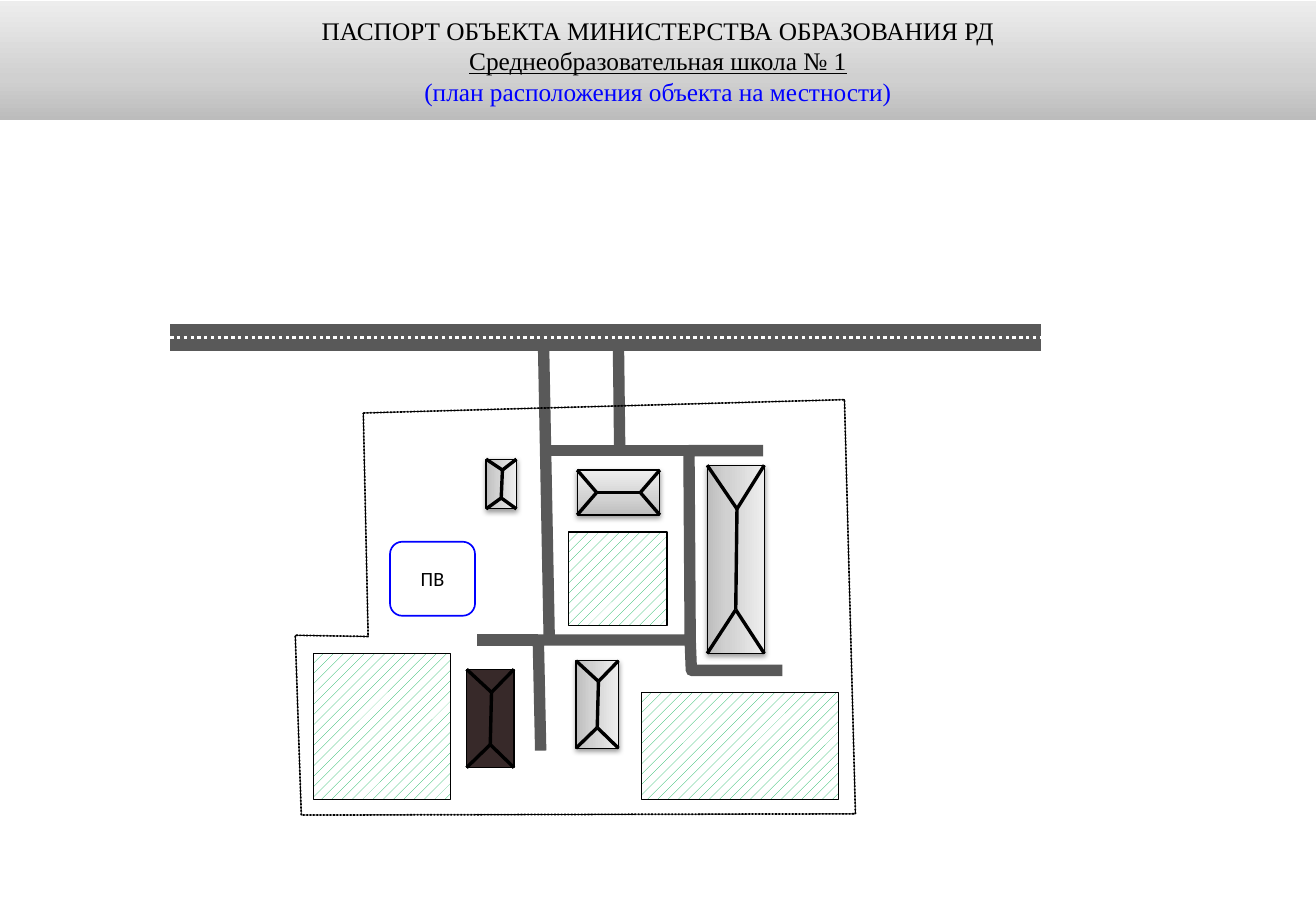
from dataclasses import dataclass

from lxml import etree
from pptx import Presentation
from pptx.dml.color import RGBColor
from pptx.enum.dml import MSO_LINE, MSO_PATTERN
from pptx.enum.shapes import MSO_CONNECTOR, MSO_SHAPE
from pptx.enum.text import MSO_ANCHOR, MSO_AUTO_SIZE, PP_ALIGN
from pptx.oxml import parse_xml
from pptx.oxml.ns import qn
from pptx.util import Inches, Pt

RECTANGLE, ROUNDED = MSO_SHAPE.RECTANGLE, MSO_SHAPE.ROUNDED_RECTANGLE
STRAIGHT = MSO_CONNECTOR.STRAIGHT
HATCH = MSO_PATTERN.DASHED_UPWARD_DIAGONAL
DOTTED = MSO_LINE.ROUND_DOT
MIDDLE, CENTER, NO_FIT = MSO_ANCHOR.MIDDLE, PP_ALIGN.CENTER, MSO_AUTO_SIZE.NONE
DRAWING_NS = "http://schemas.openxmlformats.org/drawingml/2006/main"


@dataclass(frozen=True)
class Theme:
    black: str = "000000"
    white: str = "FFFFFF"
    blue: str = "0000FF"
    green: str = "00B050"
    road: str = "595959"
    dark_roof: str = "372929"
    banner: tuple = ((0, "BCBCBC"), (35, "D0D0D0"), (100, "EDEDED"))
    roof: tuple = ((0, "BDBDBD"), (35, "D1D1D1"), (100, "EEEEEE"))
    title_font: str = "Times New Roman"
    label_font: str = "Calibri"
    title_size: float = 15
    label_size: float = 12
    hairline: float = 0
    road_width: float = 6.75
    highway_width: float = 16


THEME = Theme()

TITLE_LINES = (
    ("ПАСПОРТ ОБЪЕКТА МИНИСТЕРСТВА ОБРАЗОВАНИЯ РД", THEME.black, False),
    ("Среднеобразовательная школа № 1", THEME.black, True),
    ("(план расположения объекта на местности)", THEME.blue, False),
)
BOUNDARY = ((2.99, 3.4), (6.95, 3.29), (7.04, 6.7), (2.48, 6.71),
            (2.43, 5.23), (3.03, 5.24))
ROADS = (
    ((6.28, 3.71), (5.67, 3.71), (5.68, 5.27), (4.43, 5.27), (4.45, 6.18)),
    ((4.43, 5.27), (3.93, 5.27)),
    ((4.47, 2.69), (4.52, 5.27)),
    ((5.68, 5.26), (5.69, 5.52), (6.44, 5.52)),
)
LINKS = (((5.09, 2.88), (5.1, 3.71)), ((4.5, 3.71), (5.67, 3.71)))
# left, top, width, height, depth of the hip, dark roof
BUILDINGS = (
    (5.82, 3.83, 0.47, 1.55, 0.36, False),
    (3.84, 5.51, 0.39, 0.81, 0.19, True),
    (4.74, 5.44, 0.35, 0.72, 0.17, False),
    (4.75, 3.87, 0.68, 0.37, 0.16, False),
    (4, 3.78, 0.25, 0.41, 0.09, False),
)
LAWNS = ((2.58, 5.38, 1.13, 1.2), (5.28, 5.7, 1.62, 0.88), (4.68, 4.38, 0.81, 0.77))


def rgb(value):
    return RGBColor.from_string(value)


def set_line(line, color, width, dash=None):
    line.color.rgb = rgb(color)
    line.width = Pt(width)
    if dash:
        line.dash_style = dash


def set_gradient(shape, stops):
    """Gradient that runs from the bottom edge to the top edge."""
    shape.fill.gradient()
    shape.fill.gradient_angle = 90
    stop_list = shape.element.spPr.find(qn("a:gradFill")).find(qn("a:gsLst"))
    for stop in list(stop_list):
        stop_list.remove(stop)
    for position, color in stops:
        stop = etree.SubElement(stop_list, qn("a:gs"), pos=str(position * 1000))
        etree.SubElement(stop, qn("a:srgbClr"), val=color)


def add_drop_shadow(shape):
    effects = shape.element.spPr.find(qn("a:effectLst"))
    effects.append(parse_xml(
        f'<a:outerShdw xmlns:a="{DRAWING_NS}" blurRad="{Pt(3.1)}" dist="{Pt(1.6)}" '
        f'dir="5400000" rotWithShape="0"><a:srgbClr val="{THEME.black}">'
        '<a:alpha val="38000"/></a:srgbClr></a:outerShdw>'))


def add_run(paragraph, text, font, size, color, underline=False):
    paragraph.alignment = CENTER
    run = paragraph.add_run()
    run.text = text
    run.font.name, run.font.size = font, Pt(size)
    run.font.color.rgb = rgb(color)
    run.font.underline = underline


def add_box(slide, kind, left, top, width, height):
    box = slide.shapes.add_shape(
        kind, Inches(left), Inches(top), Inches(width), Inches(height))
    box.shadow.inherit = False
    return box


def add_segment(slide, start, end, color, width, dash=None):
    segment = slide.shapes.add_connector(
        STRAIGHT, *(Inches(value) for value in (*start, *end)))
    set_line(segment.line, color, width, dash)
    etree.SubElement(segment.element.spPr, qn("a:effectLst"))


def add_outline(slide, points, color, width, dash=None, close=False):
    corners = [(Inches(x), Inches(y)) for x, y in points]
    builder = slide.shapes.build_freeform(*corners[0])
    builder.add_line_segments(corners[1:], close=close)
    outline = builder.convert_to_shape()
    outline.shadow.inherit = False
    outline.fill.background()
    set_line(outline.line, color, width, dash)


def add_title(slide):
    title = slide.shapes.title
    title.left, title.top = Inches(0), Inches(0.01)
    title.width, title.height = Inches(10.83), Inches(0.98)
    set_gradient(title, THEME.banner)
    frame = title.text_frame
    frame.auto_size, frame.vertical_anchor, frame.word_wrap = NO_FIT, MIDDLE, True
    for index, (text, color, underline) in enumerate(TITLE_LINES):
        paragraph = frame.add_paragraph() if index else frame.paragraphs[0]
        add_run(paragraph, text, THEME.title_font, THEME.title_size, color, underline)


def add_building(slide, left, top, width, height, hip, dark):
    tall = height > width
    middle_x, middle_y = left + width / 2, top + height / 2
    right, bottom = left + width, top + height
    long_side, short_side = max(width, height), min(width, height)
    walls = add_box(slide, RECTANGLE, middle_x - long_side / 2,
                    middle_y - short_side / 2, long_side, short_side)
    walls.rotation = 90 if tall else 0
    set_line(walls.line, THEME.black, THEME.hairline)
    if dark:
        walls.fill.solid()
        walls.fill.fore_color.rgb = rgb(THEME.dark_roof)
    else:
        set_gradient(walls, THEME.roof)
        add_drop_shadow(walls)

    # Ridge and the four hips that meet it
    if tall:
        ridge = ((middle_x + 0.01, top + hip), (middle_x, bottom - hip))
        near, far = ((left, top), (right, top)), ((left, bottom), (right, bottom))
    else:
        ridge = ((left + hip, middle_y), (right - hip, middle_y))
        near, far = ((left, top), (left, bottom)), ((right, top), (right, bottom))
    hips = [(end, corner) for end, pair in zip(ridge, (near, far)) for corner in pair]
    for start, end in (ridge, *hips):
        add_segment(slide, start, end, THEME.black, THEME.hairline)


def add_lawn(slide, *area):
    lawn = add_box(slide, RECTANGLE, *area)
    lawn.fill.patterned()
    lawn.fill.pattern = HATCH
    lawn.fill.fore_color.rgb = rgb(THEME.green)
    lawn.fill.back_color.rgb = rgb(THEME.white)
    set_line(lawn.line, THEME.black, THEME.hairline)


def add_reservoir(slide):
    reservoir = add_box(slide, ROUNDED, 3.21, 4.46, 0.7, 0.61)
    reservoir.fill.solid()
    reservoir.fill.fore_color.rgb = rgb(THEME.white)
    set_line(reservoir.line, THEME.blue, 1)
    frame = reservoir.text_frame
    frame.vertical_anchor = MIDDLE
    add_run(frame.paragraphs[0], "ПВ", THEME.label_font, THEME.label_size, THEME.black)


def main():
    deck = Presentation()
    deck.slide_width, deck.slide_height = Inches(10.83), Inches(7.5)
    slide = deck.slides.add_slide(deck.slide_layouts[5])
    add_title(slide)

    # School grounds: roads below the dotted fence
    for road in ROADS:
        add_outline(slide, road, THEME.road, THEME.road_width)
    for start, end in LINKS:
        add_segment(slide, start, end, THEME.road, THEME.road_width)
    for width, dash in ((0.5, None), (1, DOTTED)):
        add_outline(slide, BOUNDARY, THEME.black, width, dash, close=True)

    # Buildings, lawns and the fire reservoir
    for building in BUILDINGS:
        add_building(slide, *building)
    for lawn in LAWNS:
        add_lawn(slide, *lawn)
    add_reservoir(slide)

    # Highway with its centre marking
    highway = ((1.4, 2.78), (8.57, 2.78))
    add_segment(slide, *highway, THEME.road, THEME.highway_width)
    add_segment(slide, *highway, THEME.white, THEME.hairline, DOTTED)
    deck.save("out.pptx")


if __name__ == "__main__":
    main()
